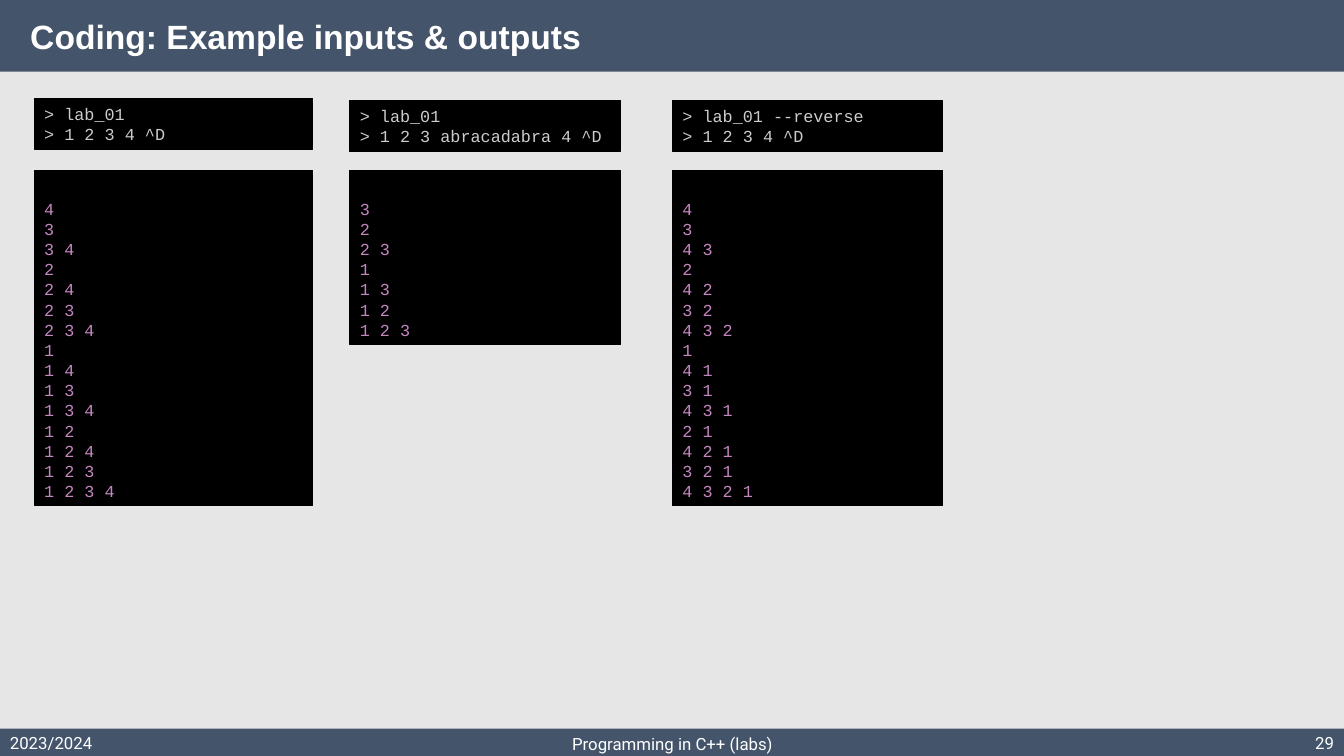
from pptx import Presentation
from pptx.dml.color import RGBColor
from pptx.enum.shapes import MSO_SHAPE as Shape
from pptx.enum.text import MSO_ANCHOR as Anchor, MSO_AUTO_SIZE as AutoSize, PP_ALIGN as Align
from pptx.util import Pt

PX = 9144
WIDTH, HEIGHT = 1333, 750
COLORS = {
    "background": "E7E6E6",
    "bar": "44546A",
    "white": "FFFFFF",
    "terminal": "000000",
    "command": "CCCCCC",
    "output": "C586C0",
}


def color(name):
    return RGBColor.from_string(COLORS[name])


def write(shape, lines, font, size, ink, align=Align.LEFT, spacing=None):
    frame = shape.text_frame
    frame.text = "\n".join(lines)
    frame.word_wrap = True
    frame.vertical_anchor = Anchor.TOP
    for paragraph in frame.paragraphs:
        paragraph.alignment = align
        paragraph.line_spacing = spacing
        for run in paragraph.runs:
            run.font.name = font
            run.font.size = Pt(size)
            run.font.color.rgb = color(ink)


presentation = Presentation()
presentation.slide_width = WIDTH * PX
presentation.slide_height = HEIGHT * PX
slide = presentation.slides.add_slide(presentation.slide_layouts[5])
slide.background.fill.solid()
slide.background.fill.fore_color.rgb = color("background")

title = slide.shapes.title
title.left, title.top, title.width, title.height = 0, 0, WIDTH * PX, 71 * PX
title.fill.solid()
title.fill.fore_color.rgb = color("bar")
write(title, ["Coding: Example inputs & outputs"], "Arial", 24, "white", spacing=0.9)
title.text_frame.auto_size = AutoSize.NONE
title.text_frame.margin_left = 30 * PX
title.text_frame.margin_top = 20 * PX
title.text_frame.paragraphs[0].runs[0].font.bold = True

footer_bar = slide.shapes.add_shape(Shape.RECTANGLE, 0, 723 * PX, WIDTH * PX, 27 * PX)
footer_bar.shadow.inherit = False
footer_bar.fill.solid()
footer_bar.fill.fore_color.rgb = color("bar")
footer_bar.line.fill.background()

footers = [
    ("2023/2024", 0, 722, 300, Align.LEFT),
    ("Programming in C++ (labs)", 442, 723, 450, Align.CENTER),
    ("29", 1033, 722, 300, Align.RIGHT),
]
for text, left, top, width, align in footers:
    footer = slide.shapes.add_textbox(left * PX, top * PX, width * PX, 27 * PX)
    write(footer, [text], "Roboto", 12, "white", align)

examples = [
    (34, 98, 276, ["> lab_01", "> 1 2 3 4 ^D"], "1234", False),
    (347, 100, 268, ["> lab_01", "> 1 2 3 abracadabra 4 ^D"], "123", False),
    (667, 100, 268, ["> lab_01 --reverse", "> 1 2 3 4 ^D"], "1234", True),
]
for left, command_top, width, command, numbers, reverse in examples:
    subsets = [[]]
    for number in reversed(numbers):
        subsets += [[number] + subset for subset in subsets]
    output = [" ".join(sorted(subset, reverse=reverse)) for subset in subsets[1:]]
    panels = [
        (169, 28, output, "output"),
        (command_top, 5, command, "command"),
    ]
    for top, margin_top, lines, ink in panels:
        height = margin_top + 20 * len(lines) + 5
        panel = slide.shapes.add_shape(
            Shape.RECTANGLE, left * PX, top * PX, width * PX, height * PX
        )
        panel.shadow.inherit = False
        panel.fill.solid()
        panel.fill.fore_color.rgb = color("terminal")
        panel.line.color.rgb = color("terminal")
        panel.line.width = Pt(0.75)
        write(panel, lines, "Courier New", 12, ink, spacing=Pt(14.4))
        panel.text_frame.margin_top = margin_top * PX
        panel.text_frame.auto_size = AutoSize.SHAPE_TO_FIT_TEXT

presentation.save("out.pptx")
